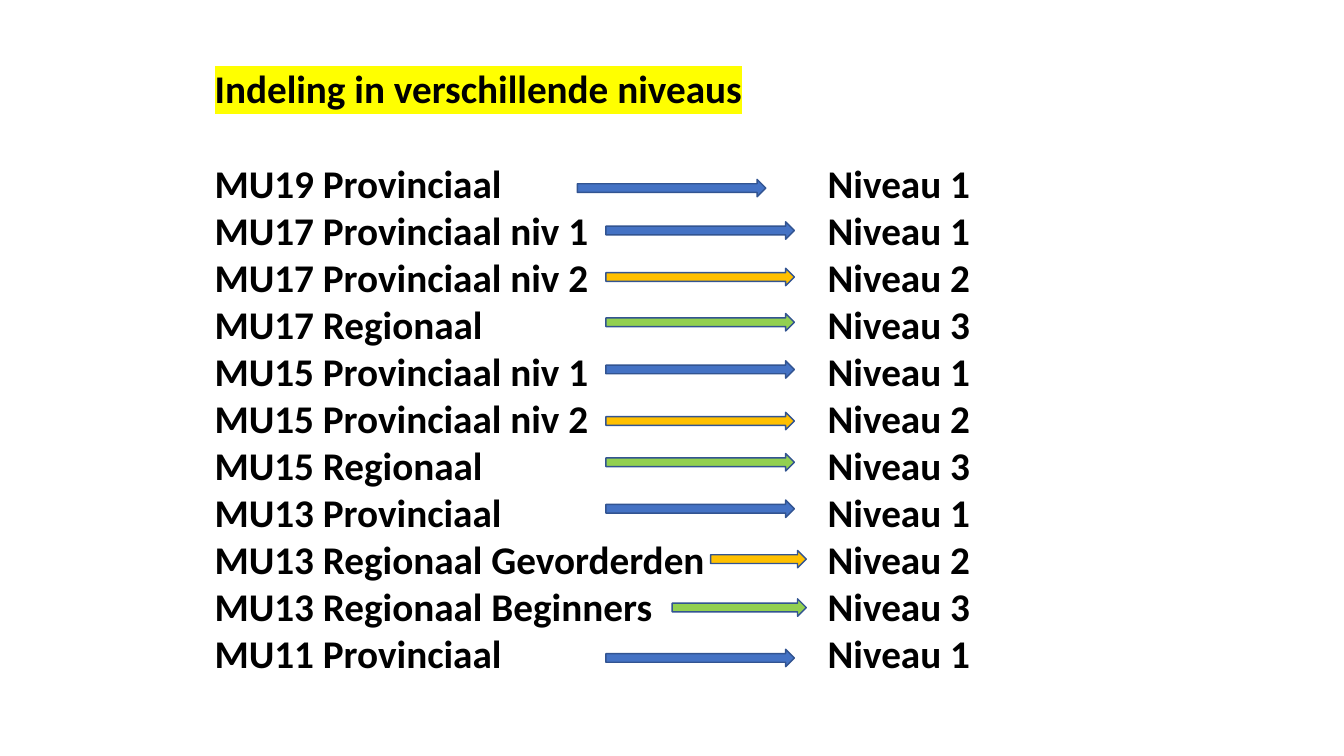
from dataclasses import dataclass

from lxml import etree
from pptx import Presentation
from pptx.dml.color import RGBColor
from pptx.enum.shapes import MSO_SHAPE
from pptx.enum.text import MSO_AUTO_SIZE
from pptx.oxml.ns import qn
from pptx.util import Cm, Pt

RIGHT_ARROW = MSO_SHAPE.RIGHT_ARROW
GROW_TO_TEXT = MSO_AUTO_SIZE.SHAPE_TO_FIT_TEXT

COLOURS = {
    "text": "000000",
    "highlight": "FFFF00",
    "outline": "325491",
    "level 1": "4472C4",
    "level 2": "FFC000",
    "level 3": "92D050",
}
FONT = "Calibri"
LEVEL_TAB = Cm(15.45)


@dataclass(frozen=True)
class Team:
    name: str
    level: int
    arrow_top: float
    arrow_left: float = 15.27
    arrow_width: float = 4.75


TEAMS = [
    Team("MU19 Provinciaal", 1, 4.52, arrow_left=14.55),
    Team("MU17 Provinciaal niv 1", 1, 5.59),
    Team("MU17 Provinciaal niv 2", 2, 6.76),
    Team("MU17 Regionaal", 3, 7.9),
    Team("MU15 Provinciaal niv 1", 1, 9.09),
    Team("MU15 Provinciaal niv 2", 2, 10.39),
    Team("MU15 Regionaal", 3, 11.43),
    Team("MU13 Provinciaal", 1, 12.6),
    Team("MU13 Regionaal Gevorderden", 2, 13.87, 17.91, 2.41),
    Team("MU13 Regionaal Beginners", 3, 15.09, 16.94, 3.38),
    Team("MU11 Provinciaal", 1, 16.36),
]


def colour(key: str) -> RGBColor:
    return RGBColor.from_string(COLOURS[key])


def style_line(line) -> None:
    line.font.name = FONT
    line.font.size = Pt(28)
    line.font.bold = True
    line.font.color.rgb = colour("text")


def add_heading(line, wording: str) -> None:
    style_line(line)
    line.space_after = Pt(34)
    heading = line.add_run()
    heading.text = wording
    highlight = etree.SubElement(heading.font._element, qn("a:highlight"))
    etree.SubElement(highlight, qn("a:srgbClr"), val=COLOURS["highlight"])


def add_team_line(line, team: Team) -> None:
    tabs = etree.SubElement(line._p.get_or_add_pPr(), qn("a:tabLst"))
    etree.SubElement(tabs, qn("a:tab"), pos=str(LEVEL_TAB), algn="l")
    style_line(line)
    line.add_run().text = f"{team.name}\tNiveau {team.level}"


def add_level_arrow(slide, team: Team) -> None:
    arrow = slide.shapes.add_shape(
        RIGHT_ARROW,
        Cm(team.arrow_left), Cm(team.arrow_top), Cm(team.arrow_width), Cm(0.44),
    )
    arrow.shadow.inherit = False
    arrow.fill.solid()
    arrow.fill.fore_color.rgb = colour(f"level {team.level}")
    arrow.line.color.rgb = colour("outline")
    arrow.line.width = Pt(1)


def main() -> None:
    presentation = Presentation()
    presentation.slide_width = Cm(33.87)
    presentation.slide_height = Cm(19.05)
    slide = presentation.slides.add_slide(presentation.slide_layouts[6])

    overview = slide.shapes.add_textbox(Cm(5.16), Cm(1.5), Cm(23.39), Cm(15.82)).text_frame
    overview.word_wrap = True
    overview.auto_size = GROW_TO_TEXT
    add_heading(overview.paragraphs[0], "Indeling in verschillende niveaus")
    for team in TEAMS:
        add_team_line(overview.add_paragraph(), team)
        add_level_arrow(slide, team)

    presentation.save("out.pptx")


if __name__ == "__main__":
    main()
